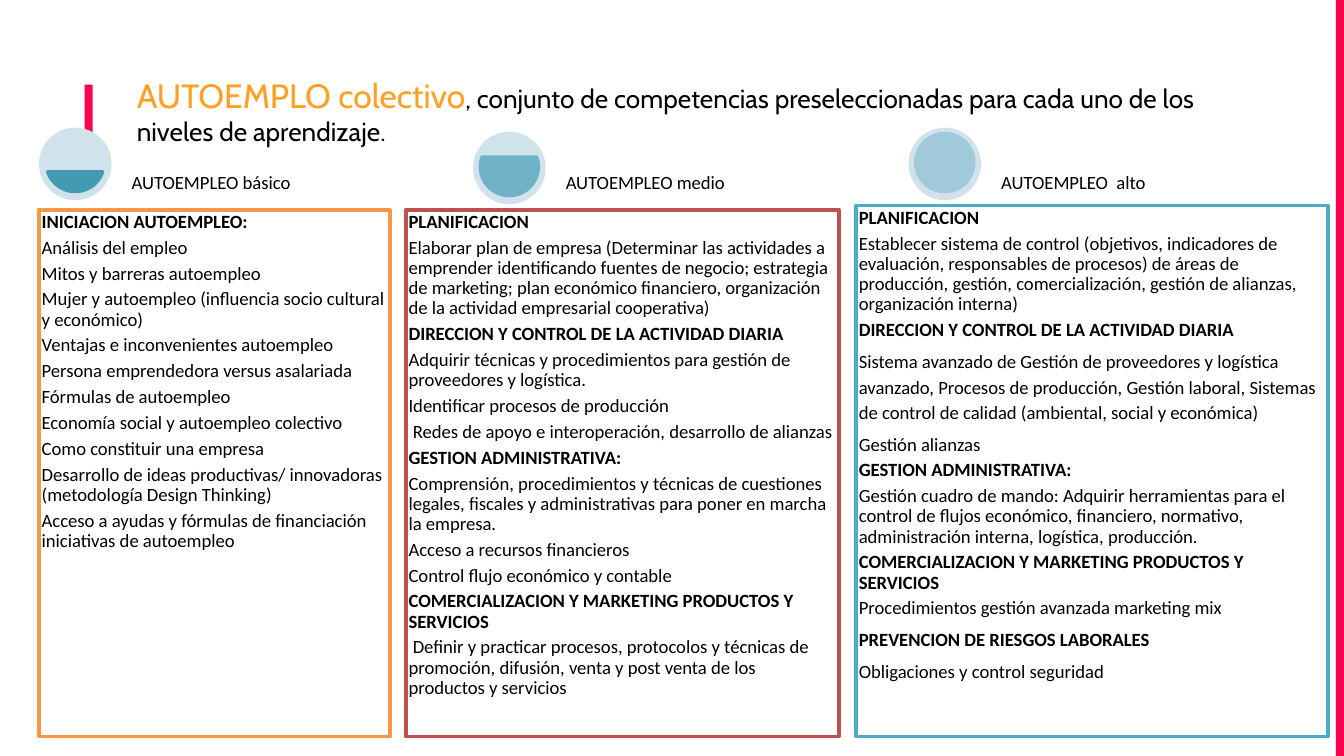
from dataclasses import dataclass
from math import asin, degrees
from pptx import Presentation
from pptx.dml.color import RGBColor
from pptx.enum.shapes import MSO_SHAPE
from pptx.enum.text import MSO_ANCHOR, PP_ALIGN
from pptx.util import Inches, Pt

HUES = {"red": "FF004E", "gold": "FDA023", "ink": "000000", "white": "FFFFFF",
        "pale": "D0E3EA", "deep": "439BB3", "mid": "70B3C8", "soft": "A0CAD9",
        "orange": "F79646", "brick": "C0504D", "teal": "4BACC6"}
DISC, FLUID = 0.54, 0.43
WIDTH = Inches(10)
HEIGHT = WIDTH * 9 // 16


@dataclass
class Level:
    name: str
    disc: tuple[float, float]
    tint: str
    drop: float
    box: tuple[float, float, float, float]
    edge: str
    lines: list[str]
    wide: tuple[int, ...] = ()


LEVELS = [
    Level("AUTOEMPLEO básico", (0.29, 0.95), "deep", 0.07, (0.29, 1.56, 2.61, 3.92), "orange", [
        "INICIACION AUTOEMPLEO:",
        "Análisis del empleo",
        "Mitos y barreras autoempleo",
        "Mujer y autoempleo (influencia socio cultural y económico)",
        "Ventajas e inconvenientes autoempleo",
        "Persona emprendedora versus asalariada",
        "Fórmulas de autoempleo",
        "Economía social y autoempleo colectivo",
        "Como constituir una empresa",
        "Desarrollo de ideas productivas/ innovadoras (metodología Design Thinking)",
        "Acceso a ayudas y fórmulas de financiación iniciativas de autoempleo"]),
    Level("AUTOEMPLEO medio", (3.52, 0.98), "mid", -0.07, (3.02, 1.56, 3.22, 3.92), "brick", [
        "PLANIFICACION",
        "Elaborar plan de empresa (Determinar las actividades a emprender identificando fuentes "
        "de negocio; estrategia de marketing; plan económico financiero, organización de la "
        "actividad empresarial cooperativa)",
        "DIRECCION Y CONTROL DE LA ACTIVIDAD DIARIA",
        "Adquirir técnicas y procedimientos para gestión de proveedores y logística.",
        "Identificar procesos de producción",
        " Redes de apoyo e interoperación, desarrollo de alianzas",
        "GESTION ADMINISTRATIVA:",
        "Comprensión, procedimientos y técnicas de cuestiones legales, fiscales y "
        "administrativas para poner en marcha la empresa.",
        "Acceso a recursos financieros",
        "Control flujo económico y contable",
        "COMERCIALIZACION Y MARKETING PRODUCTOS Y SERVICIOS",
        " Definir y practicar procesos, protocolos y técnicas de promoción, difusión, venta y "
        "post venta de los productos y servicios"]),
    Level("AUTOEMPLEO  alto", (6.76, 0.95), "soft", -FLUID / 2, (6.37, 1.53, 3.51, 3.95), "teal", [
        "PLANIFICACION",
        "Establecer sistema de control (objetivos, indicadores de evaluación, responsables de "
        "procesos) de áreas de producción, gestión, comercialización, gestión de alianzas, "
        "organización interna)",
        "DIRECCION Y CONTROL DE LA ACTIVIDAD DIARIA",
        "Sistema avanzado de Gestión de proveedores y logística avanzado, Procesos de "
        "producción, Gestión laboral, Sistemas de control de calidad (ambiental, social y "
        "económica)",
        "Gestión alianzas",
        "GESTION ADMINISTRATIVA:",
        "Gestión cuadro de mando: Adquirir herramientas para el control de flujos económico, "
        "financiero, normativo, administración interna, logística, producción.",
        "COMERCIALIZACION Y MARKETING PRODUCTOS Y SERVICIOS",
        "Procedimientos gestión avanzada marketing mix",
        "PREVENCION DE RIESGOS LABORALES",
        "Obligaciones y control seguridad"], (3, 4, 9, 10)),
]


def apply(item, **form) -> None:
    """Set each format value on the item."""
    for key, value in form.items():
        setattr(item, key, value)


def hue(name: str) -> RGBColor:
    """Look up a colour by name."""
    return RGBColor.from_string(HUES[name])


def shape(slide, kind, spot: tuple, fill: str, edge: str = ""):
    """Add a flat preset shape with an optional outline."""
    item = slide.shapes.add_shape(kind, *map(Inches, spot))
    item.shadow.inherit = False
    item.fill.solid()
    item.fill.fore_color.rgb = hue(fill)
    if edge:
        item.line.color.rgb = hue(edge)
        item.line.width = Pt(2)
    else:
        item.line.fill.background()
    return item


def frame(item, pad: float, anchor=MSO_ANCHOR.TOP):
    """Prepare a wrapping text frame with even insets."""
    text = item.text_frame
    sides = {f"margin_{side}": Inches(pad) for side in ("left", "top", "right", "bottom")}
    apply(text, word_wrap=True, vertical_anchor=anchor, **sides)
    return text


def write(para, words: str, size: int, face: str = "Calibri", tone: str = "ink",
          bold: bool = False) -> None:
    """Add a styled run to a paragraph."""
    run = para.add_run()
    run.text = words
    apply(run.font, size=Pt(size), name=face, bold=bold)
    run.font.color.rgb = hue(tone)


def gauge(slide, level: Level) -> None:
    """Draw a disc filled up to the level."""
    left, top = level.disc
    shape(slide, MSO_SHAPE.OVAL, (left, top, DISC, DISC), "pale")
    gap = (DISC - FLUID) / 2
    spot = (left + gap, top + gap - 0.01, FLUID, FLUID)
    angle = degrees(asin(level.drop / (FLUID / 2)))
    if angle <= -90:
        shape(slide, MSO_SHAPE.OVAL, spot, level.tint, level.tint)
        return
    fluid = shape(slide, MSO_SHAPE.CHORD, spot, level.tint, level.tint)
    for index, turn in enumerate((angle % 360, 180 - angle)):
        fluid.adjustments[index] = turn * 0.6


def column(slide, level: Level) -> None:
    """Draw the gauge, name and skill list of a level."""
    gauge(slide, level)
    panel = shape(slide, MSO_SHAPE.RECTANGLE, level.box, "white", level.edge)
    text = frame(panel, 0.02)
    for index, line in enumerate(level.lines):
        para = text.add_paragraph() if index else text.paragraphs[0]
        space = 1.15 if index in level.wide else 0.9
        apply(para, alignment=PP_ALIGN.LEFT, line_spacing=space, space_after=Pt(3))
        write(para, line, 10, bold=line.isupper())
    label = slide.shapes.add_textbox(*map(Inches, (level.disc[0] + 0.65, 0.91, 1.6, 0.57)))
    para = frame(label, 0.04, MSO_ANCHOR.BOTTOM).paragraphs[0]
    apply(para, line_spacing=0.9, space_after=Pt(6))
    write(para, level.name, 10)


def main() -> None:
    """Build and save the slide."""
    deck = Presentation()
    apply(deck, slide_width=WIDTH, slide_height=HEIGHT)
    slide = deck.slides.add_slide(deck.slide_layouts[6])
    for spot in ((0.63, 0.63, 0.06, 0.74), (9.94, 0, 0.06, HEIGHT.real / Inches(1))):
        shape(slide, MSO_SHAPE.RECTANGLE, spot, "red")
    title = slide.shapes.add_textbox(*map(Inches, (0.92, 0.46, 8.13, 0.94)))
    para = frame(title, 0.1).paragraphs[0]
    write(para, "AUTOEMPLO colectivo", 18, "Cabin", "gold")
    write(para, ", conjunto de competencias preseleccionadas para cada uno de los niveles "
          "de aprendizaje.", 14, "Cabin")
    for level in LEVELS:
        column(slide, level)
    deck.save("out.pptx")


if __name__ == "__main__":
    main()
